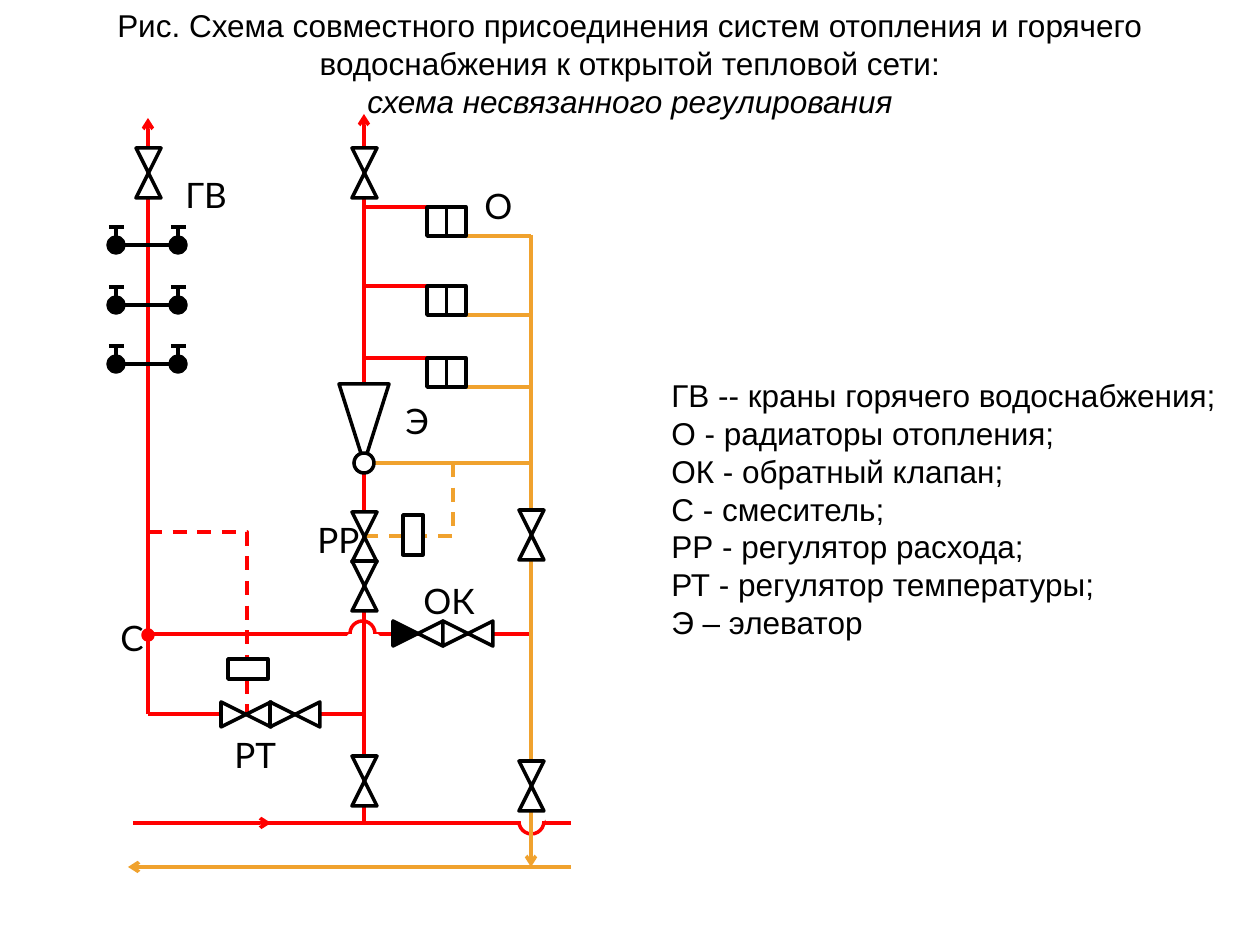
from lxml.etree import SubElement
from pptx import Presentation
from pptx.dml.color import RGBColor
from pptx.enum.dml import MSO_LINE
from pptx.enum.shapes import MSO_CONNECTOR, MSO_SHAPE
from pptx.enum.text import MSO_ANCHOR, MSO_AUTO_SIZE, PP_ALIGN
from pptx.oxml.ns import qn
from pptx.util import Emu, Pt

COLORS = {"supply": "FF0000", "return": "F0A22E", "black": "000000", "white": "FFFFFF"}
TITLE = [
    ("Рис. Схема совместного присоединения систем отопления и горячего "
     "водоснабжения к открытой тепловой сети:", False),
    ("схема несвязанного регулирования", True),
]
LEGEND = [
    "ГВ -- краны горячего водоснабжения;",
    "О - радиаторы отопления;",
    "ОК - обратный клапан;",
    "С - смеситель;",
    "РР - регулятор расхода;",
    "РТ - регулятор температуры;",
    "Э – элеватор",
]
# text, left, top, width
LABELS = [
    ("РТ", 222, 727, 69), ("С", 108, 610, 69), ("ГВ", 173, 167, 69),
    ("РР", 305, 512, 69), ("Э", 393, 393, 69), ("О", 472, 178, 69), ("ОК", 411, 573, 81),
]
X_HOT, X_HEAT, X_RETURN = 148, 364, 531
# colour, start, end, arrowhead at the end
CROSSED_PIPES = [
    ("supply", (262, 823), (571, 823), False),
    ("supply", (133, 823), (271, 823), True),
    ("return", (571, 867), (128, 867), True),
    ("supply", (X_HOT, 714), (X_HOT, 118), True),
    ("supply", (X_HOT, 714), (X_HEAT, 714), False),
    ("supply", (X_HOT, 634), (X_RETURN, 634), False),
]
RISERS = [
    ("return", (374, 463), (X_RETURN, 463), False),
    ("return", (X_RETURN, 235), (X_RETURN, 867), True),
    ("supply", (X_HEAT, 823), (X_HEAT, 114), True),
]
# circle left and top, cover left and top
HOPS = [((350, 621), (349, 636)), ((519, 809), (515, 809))]
IMPULSE_LINES = [
    ("return", [(453, 463), (453, 536), (364, 536)]),
    ("supply", [(148, 532), (247, 532), (247, 714)]),
]
REGULATORS = [(403, 515, 20, 40), (228, 659, 40, 20)]
VERTICAL_VALVES = [(136, 148), (352, 148), (352, 512), (352, 561), (352, 756),
                   (519, 510), (519, 761)]
# left, top, fill of the left half
HORIZONTAL_VALVES = [(221, 702, "white"), (270, 702, "white"),
                     (393, 621, "black"), (443, 621, "white")]
VALVE = 25
RADIATOR_TOPS = [207, 286, 358]
RADIATOR_X, RADIATOR_W, RADIATOR_H = 427, 39, 29
TAP_ROWS = [245, 305, 364]
TAP_XS = [116, 178]


def px(n):
    return Emu(round(n * 914400 / 126))


def rgb(name):
    return RGBColor.from_string(COLORS[name])


def write(tf, lines, size=18, font="Arial", align=PP_ALIGN.LEFT):
    """Fill a text frame with (text, italic) lines."""
    tf.word_wrap = True
    tf.auto_size = MSO_AUTO_SIZE.NONE
    tf.vertical_anchor = MSO_ANCHOR.TOP
    for i, (text, italic) in enumerate(lines):
        p = tf.paragraphs[0] if i == 0 else tf.add_paragraph()
        p.alignment = align
        p.space_before = Pt(0)
        r = p.add_run()
        r.text = text
        r.font.size, r.font.name, r.font.italic = Pt(size), font, italic
        r.font.color.rgb = rgb("black")


def text_box(shapes, box, lines, **fmt):
    write(shapes.add_textbox(*map(px, box)).text_frame, lines, **fmt)


def shape(shapes, kind, box, fill="white", line="black", rotation=0):
    sp = shapes.add_shape(kind, *map(px, box))
    sp.shadow.inherit = False
    sp.rotation = rotation
    if fill:
        sp.fill.solid()
        sp.fill.fore_color.rgb = rgb(fill)
    else:
        sp.fill.background()
    sp.line.color.rgb = rgb(line)
    sp.line.width = Pt(2)
    return sp


def line(shapes, color, start, end, arrow=False):
    cx = shapes.add_connector(MSO_CONNECTOR.STRAIGHT, *map(px, start + end))
    cx.line.color.rgb = rgb(color)
    cx.line.width = Pt(2)
    if arrow:
        SubElement(cx.line._get_or_add_ln(), qn("a:tailEnd"), type="arrow")
    SubElement(cx._element.spPr, qn("a:effectLst"))
    return cx


def dashed(shapes, color, points):
    first, *rest = [tuple(map(px, point)) for point in points]
    fb = shapes.build_freeform(*first)
    fb.add_line_segments(rest, close=False)
    sp = fb.convert_to_shape()
    sp.shadow.inherit = False
    sp.fill.background()
    sp.line.color.rgb = rgb(color)
    sp.line.width = Pt(2)
    sp.line.dash_style = MSO_LINE.DASH


def valve(shapes, x, y, vertical=True, first_fill="white"):
    """Two triangles meeting at their tips."""
    g = shapes.add_group_shape().shapes
    dx, dy = (0, VALVE) if vertical else (VALVE, 0)
    turns = (180, 0) if vertical else (90, 270)
    for i, fill in enumerate((first_fill, "white")):
        shape(g, MSO_SHAPE.ISOSCELES_TRIANGLE, (x + i * dx, y + i * dy, VALVE, VALVE),
              fill=fill, rotation=turns[i])


def hop(shapes, circle, cover):
    """Half circle where one pipe passes another."""
    g = shapes.add_group_shape().shapes
    shape(g, MSO_SHAPE.OVAL, (*circle, 25, 25), line="supply")
    shape(g, MSO_SHAPE.RECTANGLE, (*cover, 29, 10), line="white")


def radiator(shapes, y):
    bottom, middle = y + RADIATOR_H, RADIATOR_X + RADIATOR_W / 2
    line(shapes, "supply", (middle, y), (X_HEAT, y))
    line(shapes, "return", (X_RETURN, bottom), (middle, bottom))
    g = shapes.add_group_shape().shapes
    body = shape(g, MSO_SHAPE.RECTANGLE, (RADIATOR_X, y, RADIATOR_W, RADIATOR_H), fill=None)
    divider = line(g, "black", (middle, y), (middle, bottom))
    divider.begin_connect(body, 0)
    divider.end_connect(body, 2)


def tap_pair(shapes, y):
    g = shapes.add_group_shape().shapes
    line(g, "black", (TAP_XS[0], y), (TAP_XS[1], y))
    for x in TAP_XS:
        shape(g, MSO_SHAPE.OVAL, (x - 8, y - 8, 16, 16), fill="black")
        line(g, "black", (x, y - 17), (x, y - 7))
        line(g, "black", (x - 7, y - 18), (x + 8, y - 18))


def main():
    prs = Presentation()
    prs.slide_width, prs.slide_height = px(1260), px(945)
    s = prs.slides.add_slide(prs.slide_layouts[5])
    shapes = s.shapes
    title = shapes.title
    title.left, title.top, title.width, title.height = map(px, (0, 0, 1260, 165))
    write(title.text_frame, TITLE, align=PP_ALIGN.CENTER)
    text_box(shapes, (659, 370, 581, 280), [(text, False) for text in LEGEND])

    for pipe in CROSSED_PIPES:
        line(shapes, *pipe)
    for circle, cover in HOPS:
        hop(shapes, circle, cover)
    for pipe in RISERS:
        line(shapes, *pipe)
    for color, points in IMPULSE_LINES:
        dashed(shapes, color, points)

    for y in RADIATOR_TOPS:
        radiator(shapes, y)
    for y in TAP_ROWS:
        tap_pair(shapes, y)
    for box in REGULATORS:
        shape(shapes, MSO_SHAPE.RECTANGLE, box)
    for x, y in VERTICAL_VALVES:
        valve(shapes, x, y)
    for x, y, fill in HORIZONTAL_VALVES:
        valve(shapes, x, y, vertical=False, first_fill=fill)
    shape(shapes, MSO_SHAPE.ISOSCELES_TRIANGLE, (339, 384, 50, 79), rotation=180)
    shape(shapes, MSO_SHAPE.OVAL, (354, 453, 20, 20))
    shape(shapes, MSO_SHAPE.OVAL, (143, 630, 10, 10), fill="supply", line="supply")

    for text, x, y, width in LABELS:
        text_box(shapes, (x, y, width, 55), [(text, False)], size=20, font="Lato")
    prs.save("out.pptx")


if __name__ == "__main__":
    main()
